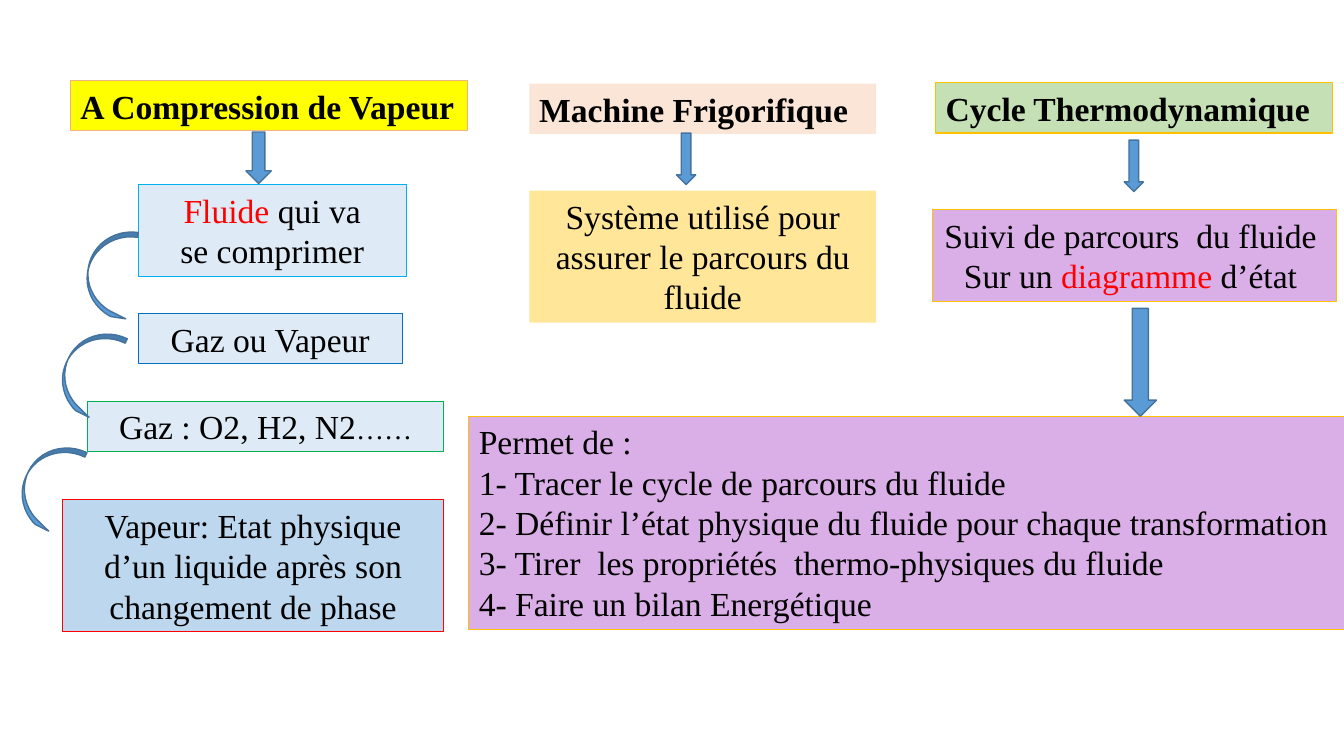
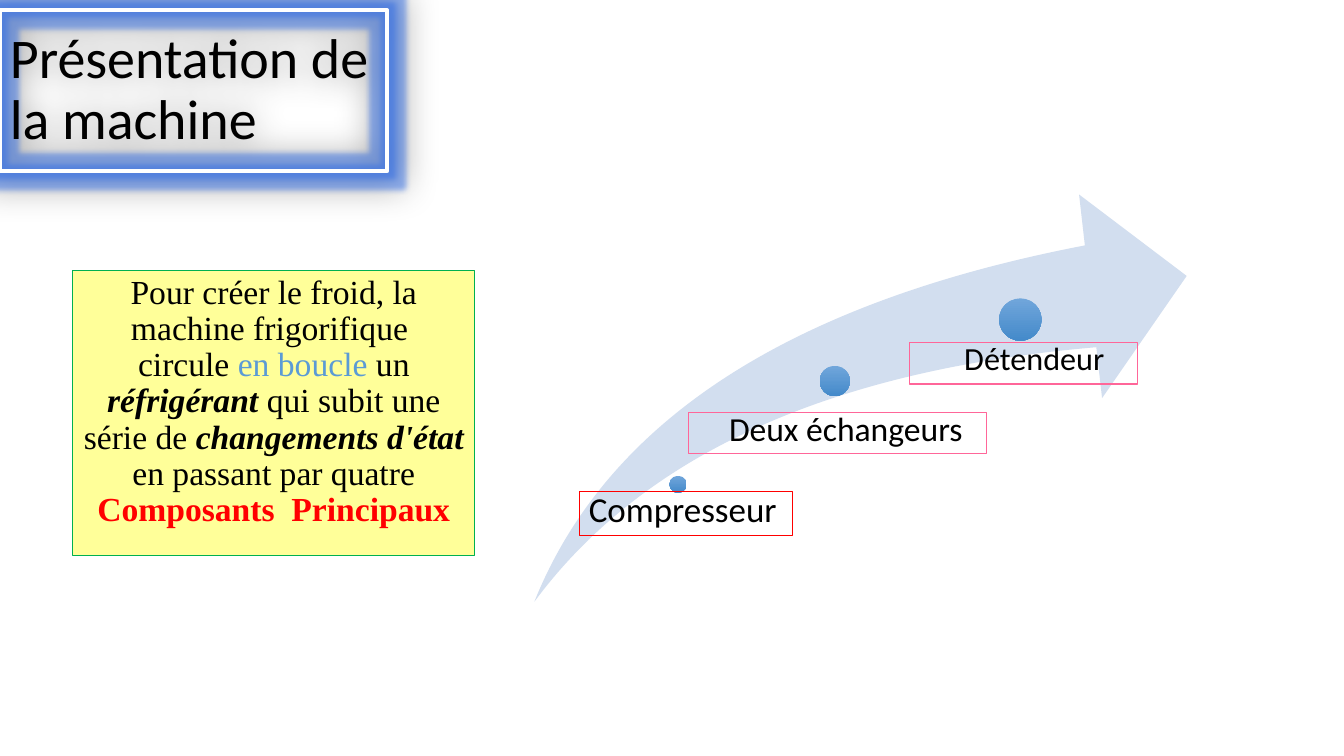
"""Build two slides on the vapour compression refrigeration machine."""
from lxml import etree
from pptx import Presentation
from pptx.dml.color import RGBColor
from pptx.enum.shapes import MSO_SHAPE as SH
from pptx.enum.text import MSO_ANCHOR as VA, PP_ALIGN as AL
from pptx.util import Pt

PX = 9144
SERIF, SANS = "Times New Roman", "Calibri"
BLACK, RED, BLUE, EDGE = "000000", "FF0000", "5B9BD5", "43739E"
ICE, LILAC, GOLD, PINK = "DEEBF7", "DAAEE6", "FFC000", "FF6699"
NS = "http://schemas.openxmlformats.org/drawingml/2006/main"
hue = RGBColor.from_string


def box(page, at, paras, fill=None, line=None, wide=0.75, size=24, font=SERIF,
        align=AL.CENTER, lead=1.0, pad=None):
    """Add a text box; a run is (text, colour, style letters)."""
    item = page.shapes.add_textbox(*[n * PX for n in at])
    if fill:
        item.fill.solid()
        item.fill.fore_color.rgb = hue(fill)
    if line:
        item.line.color.rgb = hue(line)
        item.line.width = Pt(wide)
    frame = item.text_frame
    frame.word_wrap = True
    if pad is not None:
        frame.margin_left = pad * PX
        frame.margin_top = frame.margin_right = frame.margin_bottom = 0
    for i, runs in enumerate(paras):
        para = frame.paragraphs[0] if i == 0 else frame.add_paragraph()
        para.alignment, para.line_spacing = align, lead
        for text, tint, style in runs:
            run = para.add_run()
            run.text = text
            run.font.name, run.font.size = font, Pt(size)
            run.font.color.rgb = hue(tint)
            run.font.bold, run.font.italic = "b" in style, "i" in style
    return item


def form(page, kind, at, fill, line=None, turn=0, adj=()):
    """Add a preset shape without text."""
    item = page.shapes.add_shape(kind, *[n * PX for n in at])
    item.shadow.inherit = False
    item.rotation = turn
    for i, value in enumerate(adj):
        item.adjustments[i] = value
    item.fill.solid()
    item.fill.fore_color.rgb = hue(fill)
    if line:
        item.line.color.rgb = hue(line)
        item.line.width = Pt(1)
    else:
        item.line.fill.background()
    return item


deck = Presentation()
deck.slide_width, deck.slide_height = 1333 * PX, 750 * PX
blank = deck.slide_layouts[6]

page = deck.slides.add_slide(blank)
for at, text, fill, line in [
    ((70, 80, 394, 50), "A Compression de Vapeur", "FFFF00", "F4B183"),
    ((525, 83, 344, 50), "Machine Frigorifique", "FBE5D6", None),
    ((928, 82, 394, 50), "Cycle Thermodynamique", "C5E0B4", GOLD),
]:
    box(page, at, [[(text, BLACK, "b")]], fill, line, align=AL.LEFT)

for at, paras, fill, line in [
    ((137, 183, 266, 91),
     [[("Fluide", RED, ""), (" qui va", BLACK, "")], [("se comprimer", BLACK, "")]],
     ICE, "00B0F0"),
    ((137, 311, 262, 50), [[("Gaz ou Vapeur", BLACK, "")]], ICE, "0070C0"),
    ((62, 496, 378, 131),
     [[("Vapeur: Etat physique d’un liquide après son changement de phase", BLACK, "")]],
     "BDD7EE", RED),
    ((525, 189, 344, 131),
     [[("Système utilisé pour assurer le parcours du fluide", BLACK, "")]],
     "FFE699", None),
    ((925, 208, 401, 91),
     [[("Suivi de parcours  du fluide ", BLACK, "")],
      [("Sur un ", BLACK, ""), ("diagramme", RED, ""), (" d’état ", BLACK, "")]],
     LILAC, GOLD),
]:
    box(page, at, paras, fill, line)

gas = box(page, (87, 398, 353, 50),
          [[("Gaz : O2, H2, N2", BLACK, ""), ("……", BLACK, "")]], ICE, "00B050")
gas.text_frame.paragraphs[0].runs[1].font.size = Pt(20)

goals = ["Permet de :",
         "1- Tracer le cycle de parcours du fluide",
         "2- Définir l’état physique du fluide pour chaque transformation",
         "3- Tirer  les propriétés  thermo-physiques du fluide",
         "4- Faire un bilan Energétique"]
box(page, (465, 413, 869, 212), [[(goal, BLACK, "")] for goal in goals],
    LILAC, GOLD, align=AL.LEFT)

for at in [(244, 131, 25, 51), (671, 132, 19, 51), (1115, 139, 19, 51),
           (1115, 306, 32, 107)]:
    form(page, SH.DOWN_ARROW, at, BLUE, EDGE)
for x, y, turn, bend in [(87, 227, 8.3, 0.11), (65, 322, 26, 0.25), (25, 435, 26, 0.25)]:
    form(page, SH.CURVED_RIGHT_ARROW, (x, y, 44, 89), BLUE, EDGE, turn,
         (bend, 0.11, 0.341))

page = deck.slides.add_slide(blank)
title = box(page, (0, 10, 384, 160), [[("Présentation de la machine", BLACK, "")]],
            line="FFFFFF", wide=2.75, size=40, font=SANS, align=AL.LEFT, lead=0.9)
title.text_frame.vertical_anchor = VA.MIDDLE
title._element.spPr.append(etree.fromstring(
    f'<a:effectLst xmlns:a="{NS}">'
    '<a:glow rad="101600"><a:srgbClr val="2E6BE6"><a:alpha val="50000"/></a:srgbClr></a:glow>'
    '<a:outerShdw blurRad="317500" dist="0" dir="2700000" algn="tl" rotWithShape="0">'
    '<a:srgbClr val="000000"><a:alpha val="43000"/></a:srgbClr></a:outerShdw>'
    '</a:effectLst>'))

box(page, (72, 268, 399, 283), [[
    ("Pour créer le froid, la machine frigorifique  circule ", BLACK, ""),
    ("en boucle ", BLUE, ""),
    ("un ", BLACK, ""),
    ("réfrigérant ", BLACK, "bi"),
    ("qui subit une série de ", BLACK, ""),
    ("changements d'état", BLACK, "bi"),
    (" en passant par quatre ", BLACK, ""),
    ("Composants  Principaux", RED, "b"),
]], "FFFF99", "00B050", lead=0.9)

form(page, SH.SWOOSH_ARROW, (530, 193, 647, 404), "D2DEEF", adj=(0.25, 0.25))
for name, at, line, size, pad, align, dot in [
    ("Compresseur", (575, 488, 211, 43), RED, 25, 9, AL.LEFT, (664, 472, 17)),
    ("Deux échangeurs", (683, 409, 296, 41), PINK, 24, 16, AL.CENTER, (813, 363, 30)),
    ("Détendeur", (902, 340, 226, 41), PINK, 23, 22, AL.CENTER, (991, 296, 42)),
]:
    x, y, wide = dot
    ball = form(page, SH.OVAL, (x, y, wide, wide), BLUE)
    ball.fill.gradient()
    ball.fill.gradient_angle = 270
    for stop, tint in zip(ball.fill.gradient_stops, ("71A6DB", "448ACA")):
        stop.color.rgb = hue(tint)
    box(page, at, [[(name, BLACK, "")]], line=line, size=size, font=SANS,
        align=align, lead=0.9, pad=pad)

deck.save("out.pptx")
